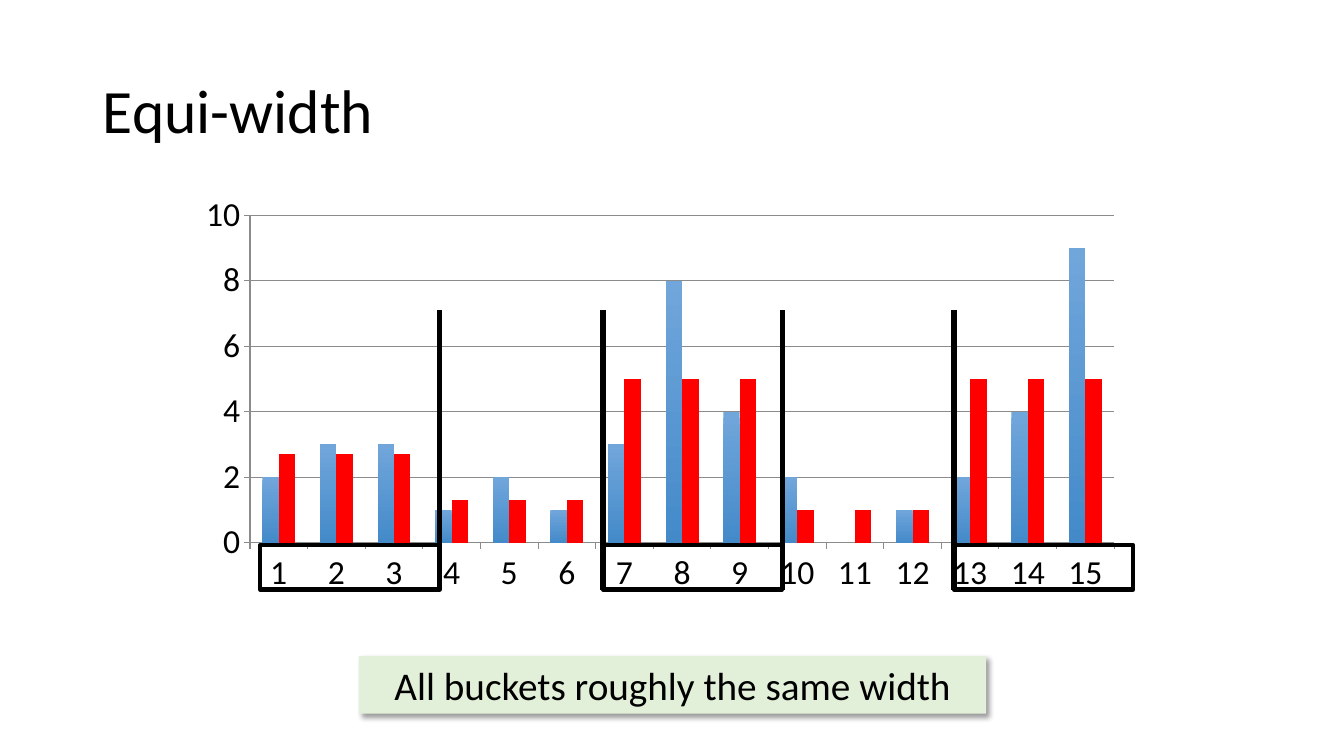
from lxml import etree
from pptx import Presentation
from pptx.chart.data import CategoryChartData
from pptx.dml.color import RGBColor
from pptx.enum.chart import XL_CHART_TYPE, XL_TICK_MARK
from pptx.enum.shapes import MSO_CONNECTOR, MSO_SHAPE
from pptx.enum.text import MSO_ANCHOR, PP_ALIGN
from pptx.oxml import parse_xml
from pptx.oxml.ns import nsdecls, qn
from pptx.util import Inches, Pt

FONT = "Calibri"
COLORS = {"ink": "000000", "blue_top": "71A6DB", "blue_bottom": "448AC9",
          "red": "FF0000", "grid": "8B8B8B", "banner": "E2F0D9"}
FREQUENCIES = [2, 3, 3, 1, 2, 1, 3, 8, 4, 2, 0, 1, 2, 4, 9]
BUCKET_MEANS = [2.7, 1.3, 5, 1, 5]
BUCKET_SIZE = 3


def color(name):
    return RGBColor.from_string(COLORS[name])


def write(paragraph, text, size):
    run = paragraph.add_run()
    run.text = text
    run.font.name, run.font.size = FONT, Pt(size)
    run.font.color.rgb = color("ink")


def add_title(slide, left, top, width, height):
    title = slide.shapes.title
    title.left, title.top = Inches(left), Inches(top)
    title.width, title.height = Inches(width), Inches(height)
    title.text_frame.vertical_anchor = MSO_ANCHOR.MIDDLE
    heading = title.text_frame.paragraphs[0]
    heading.alignment, heading.line_spacing = PP_ALIGN.LEFT, 0.9
    write(heading, "Equi-width", 44)


def add_histogram(slide, left, top, width, height):
    data = CategoryChartData()
    data.categories = [str(i + 1) for i in range(len(FREQUENCIES))]
    data.add_series("Series 1", FREQUENCIES)
    data.add_series("Series 2", [m for m in BUCKET_MEANS for _ in range(BUCKET_SIZE)])
    chart = slide.shapes.add_chart(
        XL_CHART_TYPE.COLUMN_CLUSTERED, Inches(left), Inches(top),
        Inches(width), Inches(height), data).chart
    chart.has_legend = chart.has_title = False
    chart.font.name, chart.font.size = FONT, Pt(10)
    chart.font.color.rgb = color("ink")

    # Bars
    plot = chart.plots[0]
    plot.gap_width, plot.overlap, plot.vary_by_categories = 150, 0, False
    actual, estimate = plot.series
    shade = actual.format.fill
    shade.gradient()
    shade.gradient_angle = 270
    for stop, name in zip(shade.gradient_stops, ("blue_top", "blue_bottom")):
        stop.color.rgb = color(name)
    estimate.format.fill.solid()
    estimate.format.fill.fore_color.rgb = color("red")

    # Axes
    for axis in (chart.category_axis, chart.value_axis):
        axis.tick_labels.font.size = Pt(24)
        axis.tick_labels.font.name = FONT
        axis.tick_labels.font.color.rgb = color("ink")
        axis.major_tick_mark = XL_TICK_MARK.OUTSIDE
        axis.format.line.color.rgb = color("grid")
        axis.format.line.width = Pt(0.75)
    values = chart.value_axis
    values.minimum_scale, values.maximum_scale, values.major_unit = 0, 10, 2
    values.has_major_gridlines = True
    values.major_gridlines.format.line.color.rgb = color("grid")
    values.major_gridlines.format.line.width = Pt(0.75)

    # Inner plot area as fractions of the chart
    area = plot._element.getparent()
    for old in area.findall(qn("c:layout")):
        area.remove(old)
    parts = (("layoutTarget", "inner"), ("xMode", "edge"), ("yMode", "edge"),
             ("x", 0.07), ("y", 0.07), ("w", 0.91), ("h", 0.79))
    settings = "".join(f'<c:{tag} val="{val}"/>' for tag, val in parts)
    area.insert(0, parse_xml(f'<c:layout {nsdecls("c")}><c:manualLayout>{settings}'
                             '</c:manualLayout></c:layout>'))


def add_bucket_frames(slide, lefts, top, width, height):
    for left in lefts:
        frame = slide.shapes.add_shape(MSO_SHAPE.RECTANGLE, Inches(left), Inches(top),
                                       Inches(width), Inches(height))
        frame.shadow.inherit = False
        frame.fill.background()
        frame.line.color.rgb = color("ink")
        frame.line.width = Pt(3)


def add_bucket_borders(slide, positions, bottom, height):
    for x in positions:
        border = slide.shapes.add_connector(
            MSO_CONNECTOR.STRAIGHT, Inches(x), Inches(bottom),
            Inches(x), Inches(bottom - height))
        border.line.color.rgb = color("ink")
        border.line.width = Pt(4)
        etree.SubElement(border._element.spPr, qn("a:effectLst"))


def add_banner(slide, left, top, width, height):
    banner = slide.shapes.add_shape(MSO_SHAPE.RECTANGLE, Inches(left), Inches(top),
                                    Inches(width), Inches(height))
    banner.fill.solid()
    banner.fill.fore_color.rgb = color("banner")
    banner.line.fill.background()
    banner.shadow.inherit = False
    effects = banner._element.spPr.find(qn("a:effectLst"))
    effects.append(parse_xml(
        f'<a:outerShdw {nsdecls("a")} blurRad="{Pt(4)}" dist="{Pt(3)}" dir="2700000" '
        f'algn="tl" rotWithShape="0"><a:srgbClr val="{COLORS["ink"]}">'
        '<a:alpha val="40000"/></a:srgbClr></a:outerShdw>'))
    banner.text_frame.word_wrap = True
    banner.text_frame.vertical_anchor = MSO_ANCHOR.MIDDLE
    caption = banner.text_frame.paragraphs[0]
    caption.alignment = PP_ALIGN.CENTER
    write(caption, "All buckets roughly the same width", 28)


def main():
    deck = Presentation()
    deck.slide_width, deck.slide_height = Inches(13.33), Inches(7.5)
    slide = deck.slides.add_slide(deck.slide_layouts[5])
    add_title(slide, 0.92, 0.4, 11.5, 1.45)
    add_histogram(slide, 1.82, 1.85, 9.42, 4.11)
    add_bucket_frames(slide, (2.58, 5.98, 9.46), 5.41, 1.78, 0.44)
    add_bucket_borders(slide, (4.36, 5.98, 7.76, 9.46), 5.85, 2.77)
    add_banner(slide, 3.56, 6.51, 6.22, 0.57)
    deck.save("out.pptx")


if __name__ == "__main__":
    main()
